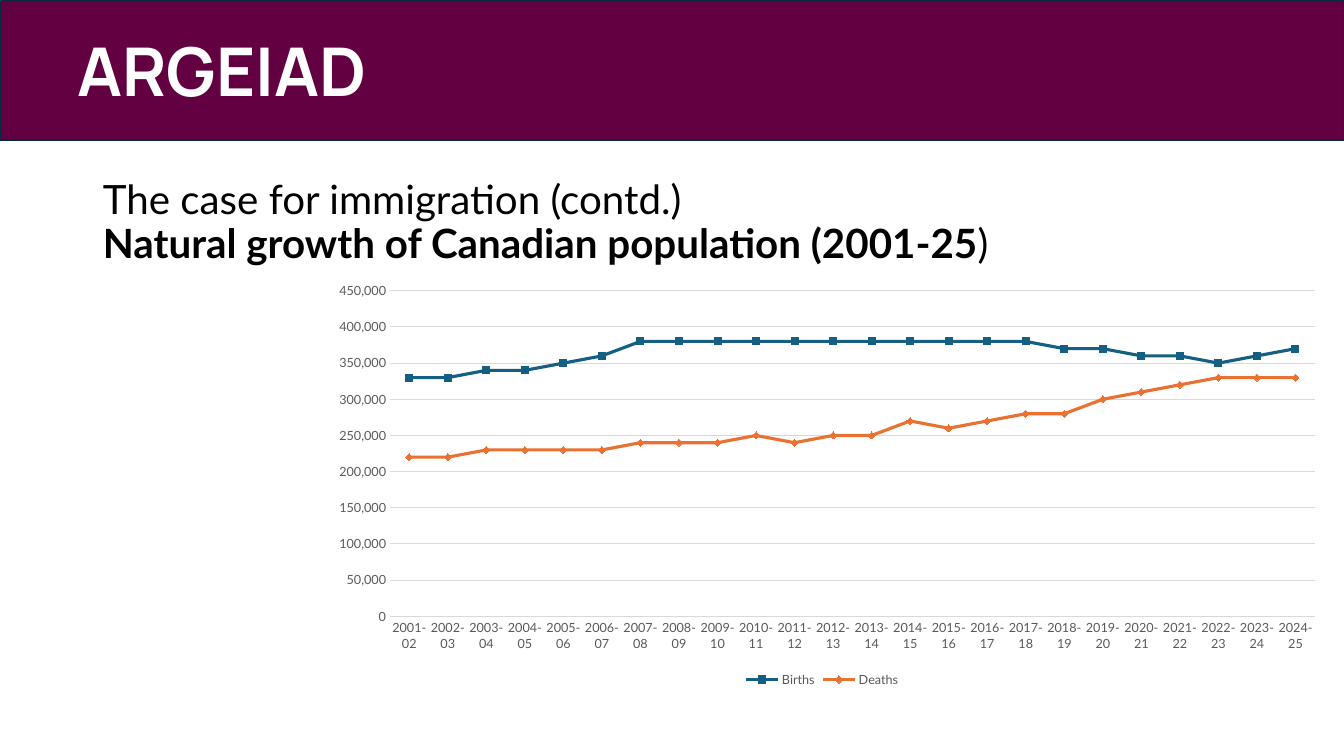
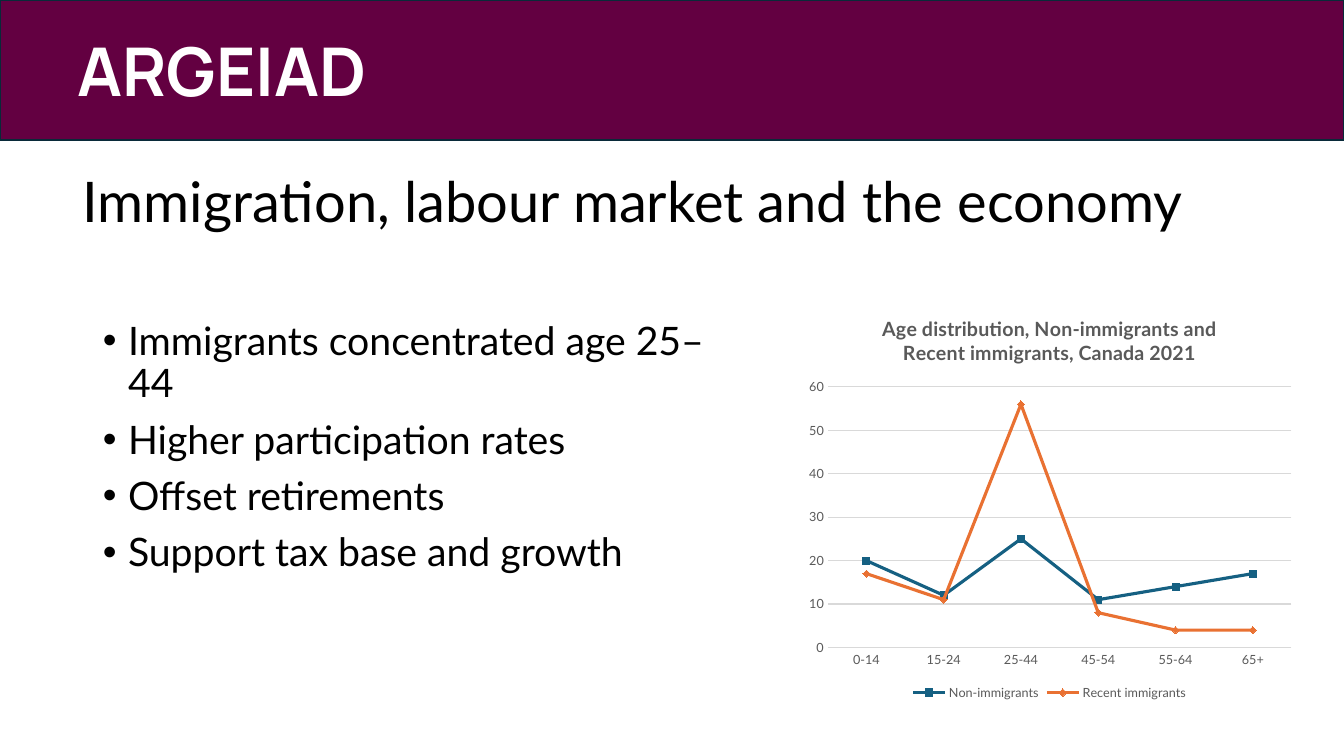
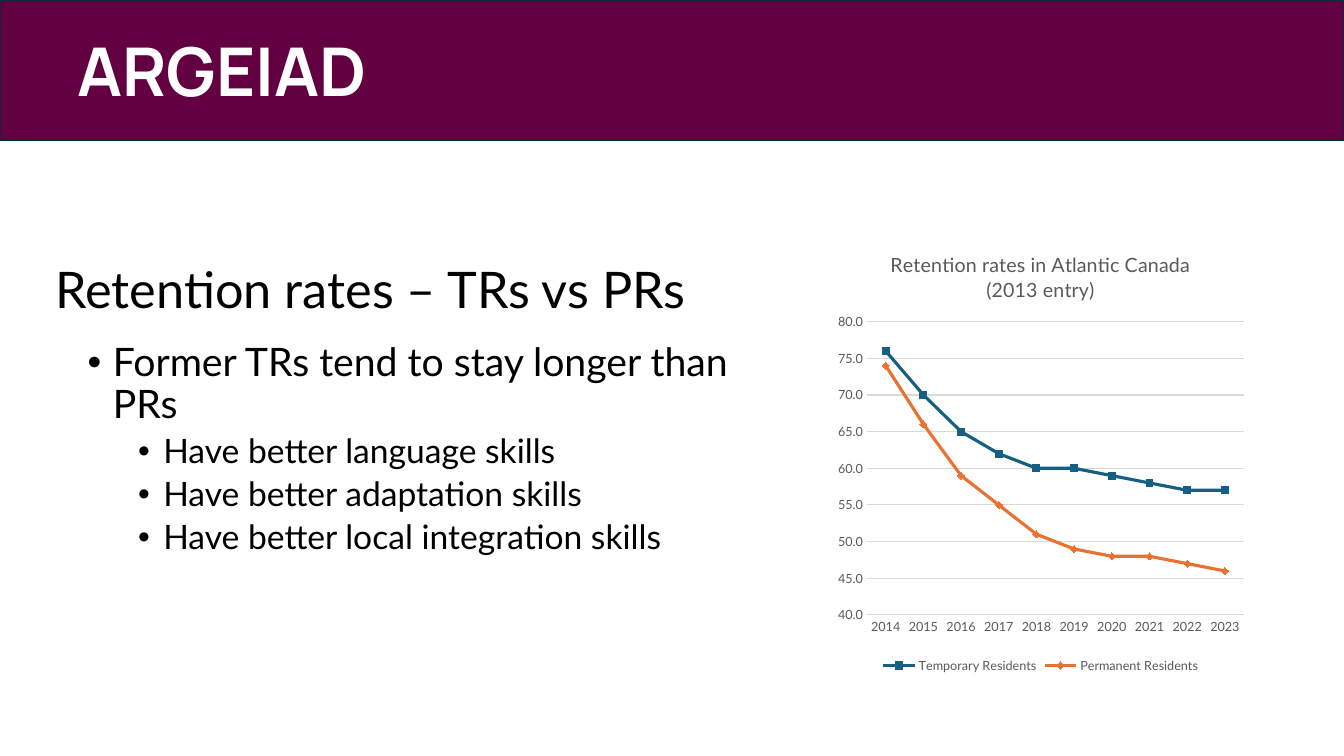
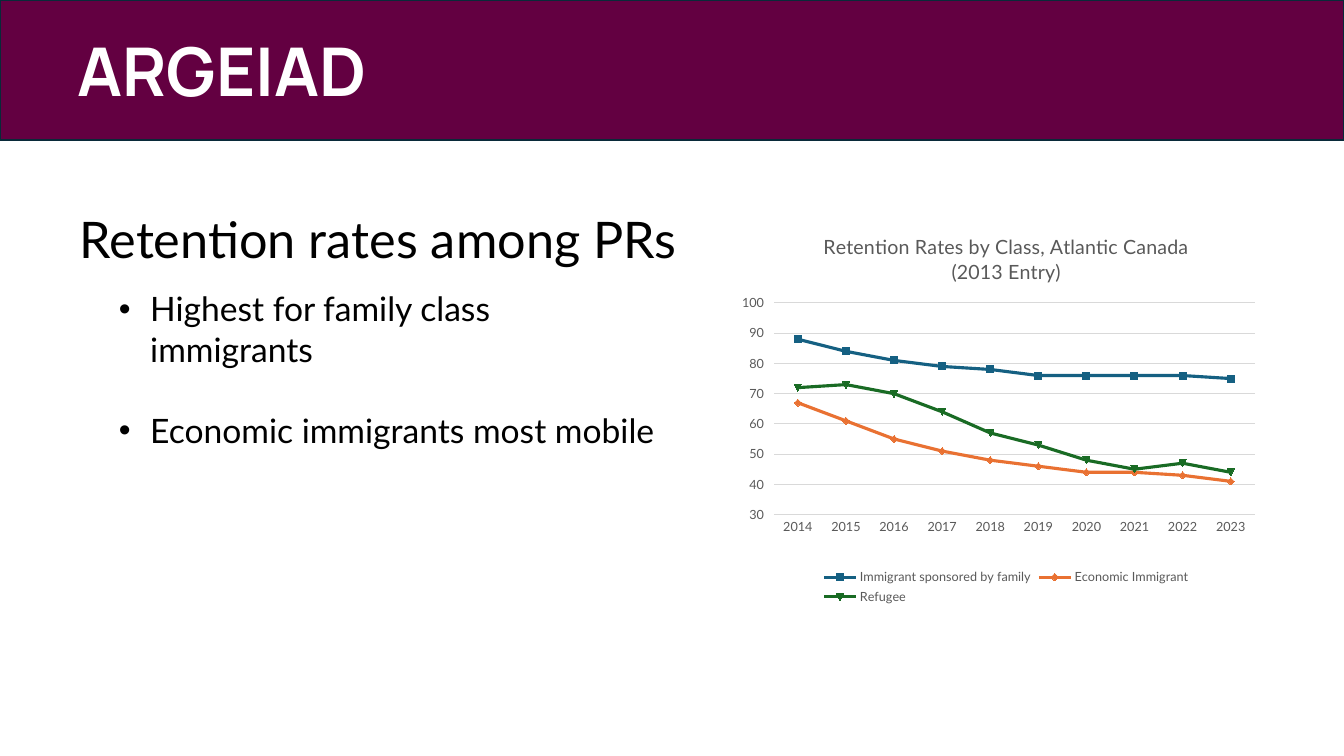
from pptx import Presentation
from pptx.chart.data import CategoryChartData
from pptx.dml.color import RGBColor
from pptx.enum.chart import XL_CHART_TYPE, XL_LEGEND_POSITION, XL_TICK_MARK
from pptx.enum.shapes import MSO_SHAPE
from pptx.enum.text import MSO_ANCHOR, MSO_AUTO_SIZE, PP_ALIGN
from pptx.oxml import parse_xml
from pptx.oxml.ns import nsdecls
from pptx.util import Inches, Pt

LINE_CHART = XL_CHART_TYPE.LINE
BOTTOM = XL_LEGEND_POSITION.BOTTOM
NO_TICK, OUTSIDE_TICK = XL_TICK_MARK.NONE, XL_TICK_MARK.OUTSIDE
RECTANGLE = MSO_SHAPE.RECTANGLE
TOP, MIDDLE = MSO_ANCHOR.TOP, MSO_ANCHOR.MIDDLE
NO_FIT = MSO_AUTO_SIZE.NONE
LEFT = PP_ALIGN.LEFT

COLORS = {
    "band": "630041",
    "band_line": "092A39",
    "white": "FFFFFF",
    "black": "000000",
    "label": "595959",
    "grid": "D9D9D9",
}
SERIES_COLORS = ["156082", "E97132", "196B24"]
BODY_FONT, BAND_FONT = "Lato", "Manrope"
WIDTH, HEIGHT, BAND_HEIGHT = 13.33, 7.5, 1.39
TITLE_ONLY, TITLE_AND_BODY = 5, 1


def rgb(name):
    return RGBColor.from_string(COLORS[name])


def add_text(paragraph, text, size=28, color="black", bold=False, font=BODY_FONT):
    for index, line in enumerate(text.split("\n")):
        if index:
            paragraph.add_line_break()
        run = paragraph.add_run()
        run.text = line
        run.font.name = font
        run.font.size = Pt(size)
        run.font.bold = bold
        run.font.color.rgb = rgb(color)


def add_bullet(paragraph, left, hanging):
    properties = paragraph._p.get_or_add_pPr()
    properties.set("marL", str(Inches(left)))
    properties.set("indent", str(-Inches(hanging)))
    properties.append(parse_xml(f'<a:buFont {nsdecls("a")} typeface="Arial"/>'))
    properties.append(parse_xml(f'<a:buChar {nsdecls("a")} char="•"/>'))


class Deck:
    def __init__(self):
        self.presentation = Presentation()
        self.presentation.slide_width = Inches(WIDTH)
        self.presentation.slide_height = Inches(HEIGHT)
        self.slide = None

    def add_slide(self, layout):
        first = self.slide is None
        self.slide = self.presentation.slides.add_slide(
            self.presentation.slide_layouts[layout])
        if first:
            self.add_master_band("ARGEIAD")

    def add_master_band(self, text):
        band = self.slide.shapes.add_shape(
            RECTANGLE, 0, 0, Inches(WIDTH), Inches(BAND_HEIGHT))
        band.shadow.inherit = False
        band.fill.solid()
        band.fill.fore_color.rgb = rgb("band")
        band.line.color.rgb = rgb("band_line")
        band.line.width = Pt(1.5)
        frame = band.text_frame
        frame.margin_left = Inches(0.77)
        frame.vertical_anchor = MIDDLE
        paragraph = frame.paragraphs[0]
        paragraph.alignment = LEFT
        add_text(paragraph, text, size=48, color="white", bold=True, font=BAND_FONT)
        self.presentation.slide_master.shapes.element.insert(2, band.element)

    def place(self, placeholder, box, anchor):
        placeholder.left, placeholder.top, placeholder.width, placeholder.height = map(
            Inches, box)
        frame = placeholder.text_frame
        frame.word_wrap = True
        frame.auto_size = NO_FIT
        frame.vertical_anchor = anchor
        return frame

    def add_title(self, box, *runs, size):
        paragraph = self.place(self.slide.shapes.title, box, MIDDLE).paragraphs[0]
        paragraph.alignment = LEFT
        paragraph.line_spacing = 0.9
        for text, bold in runs:
            add_text(paragraph, text, size=size, bold=bold)

    def add_list(self, box, items, sizes=(28, 24), gaps=(10, 5), hanging=0.25,
                 line_spacing=0.9):
        frame = self.place(self.slide.placeholders[1], box, TOP)
        for index, (level, text) in enumerate(items):
            paragraph = frame.add_paragraph() if index else frame.paragraphs[0]
            paragraph.level = level
            paragraph.alignment = LEFT
            paragraph.line_spacing = line_spacing
            paragraph.space_before = Pt(gaps[level] if index else 0)
            add_bullet(paragraph, hanging + 0.5 * level, hanging)
            add_text(paragraph, text, size=sizes[level])

    def add_line_chart(self, box, plot, categories, series, scale, title=None,
                       bold=False, number_format="0", tick=NO_TICK):
        data = CategoryChartData()
        data.categories = categories
        for name, values in series.items():
            data.add_series(name, values)
        chart = self.slide.shapes.add_chart(
            LINE_CHART, *map(Inches, box), data).chart
        chart.font.name = BODY_FONT
        chart.font.size = Pt(10)
        chart.has_title = title is not None
        if title:
            add_text(chart.chart_title.text_frame.paragraphs[0], title,
                     size=14, color="label", bold=bold)
        chart.has_legend = True
        chart.legend.position = BOTTOM
        chart.legend.include_in_layout = False
        self.style_axes(chart, scale, number_format, tick)
        for line, color in zip(chart.plots[0].series, SERIES_COLORS):
            line.smooth = False
            line.marker.style = None
            line.format.line.width = Pt(2.25)
            line.format.line.color.rgb = RGBColor.from_string(color)
        chart.plots[0].vary_by_categories = False
        self.set_plot_area(chart, plot)

    def style_axes(self, chart, scale, number_format, tick):
        category_axis, value_axis = chart.category_axis, chart.value_axis
        for item in (category_axis.tick_labels, value_axis.tick_labels, chart.legend):
            item.font.name = BODY_FONT
            item.font.size = Pt(9)
            item.font.color.rgb = rgb("label")
        category_axis.major_tick_mark = NO_TICK
        value_axis.major_tick_mark = tick
        value_axis.format.line.fill.background()
        value_axis.has_major_gridlines = True
        for element in (category_axis, value_axis.major_gridlines):
            element.format.line.color.rgb = rgb("grid")
            element.format.line.width = Pt(0.75)
        value_axis.minimum_scale, value_axis.maximum_scale, value_axis.major_unit = scale
        value_axis.tick_labels.number_format = number_format
        value_axis.tick_labels.number_format_is_linked = False

    def set_plot_area(self, chart, plot):
        area = chart.element.xpath("c:chart/c:plotArea")[0]
        for layout in area.xpath("c:layout"):
            area.remove(layout)
        sizes = "".join(f'<c:{key} val="{value}"/>' for key, value in zip("xywh", plot))
        area.insert(0, parse_xml(
            f'<c:layout {nsdecls("c")}><c:manualLayout><c:layoutTarget val="inner"/>'
            f'<c:xMode val="edge"/><c:yMode val="edge"/>{sizes}'
            '</c:manualLayout></c:layout>'))


def main():
    deck = Deck()
    years = [str(year) for year in range(2014, 2024)]

    deck.add_slide(TITLE_ONLY)
    deck.add_title(
        (0.92, 1.78, 11.5, 0.87),
        ("The case for immigration (contd.)\n", False),
        ("Natural growth of Canadian population (2001-25", True),
        (")", False),
        size=28.8)
    births = [330, 330, 340, 340, 350, 360, 380, 380, 380, 380, 380, 380,
              380, 380, 380, 380, 380, 370, 370, 360, 360, 350, 360, 370]
    deaths = [220, 220, 230, 230, 230, 230, 240, 240, 240, 250, 240, 250,
              250, 270, 260, 270, 280, 280, 300, 310, 320, 330, 330, 330]
    deck.add_line_chart(
        (3.17, 2.72, 9.97, 4.14), (0.07, 0.04, 0.92, 0.78),
        [f"{year}-{year - 1999:02d}" for year in range(2001, 2025)],
        {"Births": [value * 1000 for value in births],
         "Deaths": [value * 1000 for value in deaths]},
        scale=(0, 450000, 50000), number_format="#,##0")

    deck.add_slide(TITLE_AND_BODY)
    deck.add_title((0.72, 1.3, 11.5, 1.45),
                   ("Immigration, labour market and the economy", False), size=40)
    deck.add_list((0.92, 3.14, 6.51, 2.6), [
        (0, "Immigrants concentrated age 25–44"),
        (0, "Higher participation rates"),
        (0, "Offset retirements"),
        (0, "Support tax base and growth"),
    ])
    deck.add_line_chart(
        (7.91, 2.95, 5, 4.04), (0.06, 0.22, 0.92, 0.64),
        ["0-14", "15-24", "25-44", "45-54", "55-64", "65+"],
        {"Non-immigrants": [20, 12, 25, 11, 14, 17],
         "Recent immigrants": [17, 11, 56, 8, 4, 4]},
        scale=(0, 60, 10), bold=True,
        title="Age distribution, Non-immigrants and Recent immigrants, Canada 2021")

    deck.add_slide(TITLE_AND_BODY)
    deck.add_title((0.45, 2.46, 11.5, 0.88),
                   ("Retention rates – TRs vs PRs", False), size=36)
    deck.add_list((0.77, 3.35, 7.14, 3.83), [
        (0, "Former TRs tend to stay longer than PRs"),
        (1, "Have better language skills"),
        (1, "Have better adaptation skills"),
        (1, "Have better local integration skills"),
    ])
    deck.add_line_chart(
        (8.22, 2.31, 4.2, 4.41), (0.09, 0.2, 0.89, 0.66), years,
        {"Temporary Residents": [76, 70, 65, 62, 60, 60, 59, 58, 57, 57],
         "Permanent Residents": [74, 66, 59, 55, 51, 49, 48, 48, 47, 46]},
        scale=(40, 80, 5), number_format="0.0",
        title="Retention rates in Atlantic Canada (2013 entry)")

    deck.add_slide(TITLE_AND_BODY)
    deck.add_title((0.69, 1.68, 11.5, 1.45),
                   ("Retention rates among PRs", False), size=36)
    deck.add_list((1.08, 2.81, 5.53, 3.43), [
        (0, "Highest for family class immigrants"),
        (0, "Economic immigrants most mobile"),
    ], sizes=(24,), gaps=(29,), hanging=0.31, line_spacing=1.0)
    deck.add_line_chart(
        (7.3, 2.15, 5.36, 3.89), (0.07, 0.22, 0.89, 0.54), years,
        {"Immigrant sponsored by family": [88, 84, 81, 79, 78, 76, 76, 76, 76, 75],
         "Economic Immigrant": [67, 61, 55, 51, 48, 46, 44, 44, 43, 41],
         "Refugee": [72, 73, 70, 64, 57, 53, 48, 45, 47, 44]},
        scale=(30, 100, 10), tick=OUTSIDE_TICK,
        title="Retention Rates by Class, Atlantic Canada\n(2013 Entry)")

    deck.presentation.save("out.pptx")


if __name__ == "__main__":
    main()
